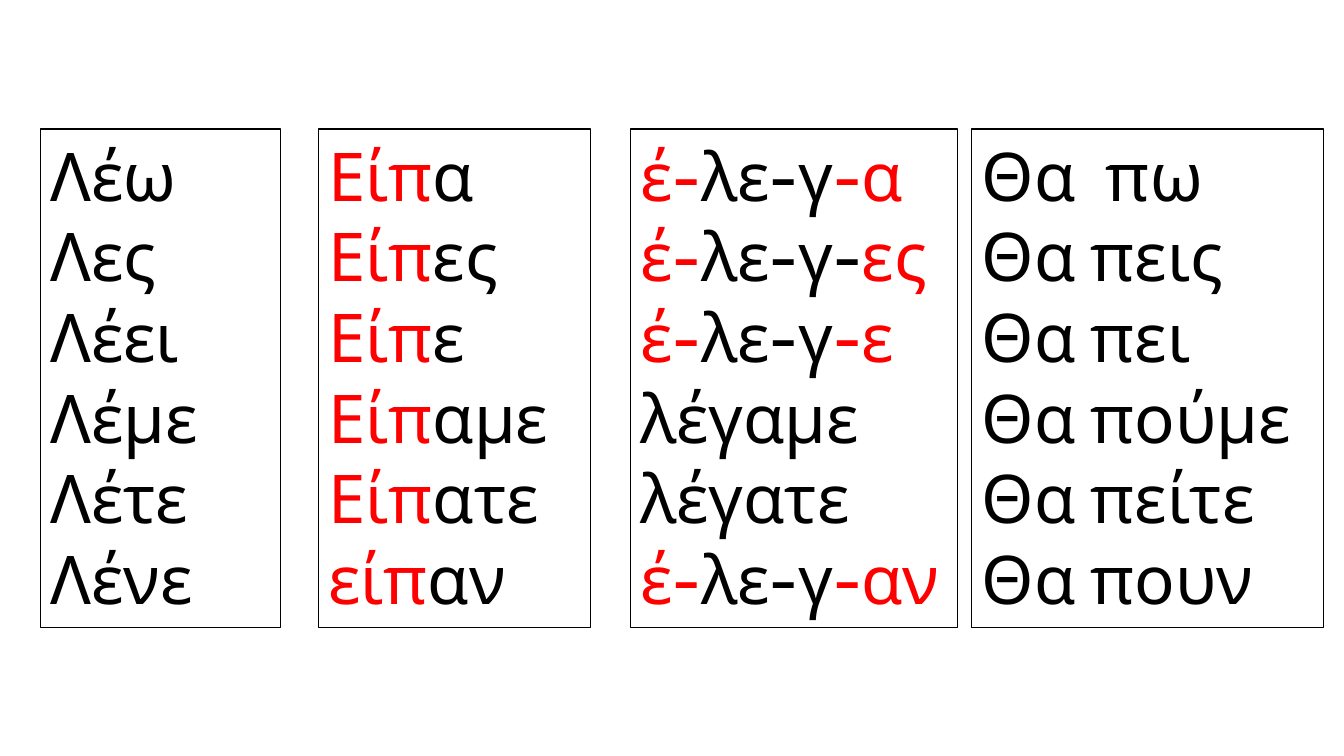
from pptx import Presentation
from pptx.dml.color import RGBColor
from pptx.enum.text import MSO_ANCHOR, MSO_AUTO_SIZE
from pptx.util import Inches, Pt

BLACK, RED = "000000", "FF0000"
TOP, HEIGHT = 1.28, 4.95
FONT = {"name": "Cabin", "size": Pt(48)}
FRAME = {
    "word_wrap": True,
    "auto_size": MSO_AUTO_SIZE.SHAPE_TO_FIT_TEXT,
    "vertical_anchor": MSO_ANCHOR.TOP,
}
RED_MARK = "*"
VERB_COLUMNS = [
    (0.4, 2.38, ["Λέω", "Λες", "Λέει", "Λέμε", "Λέτε", "Λένε"]),
    (3.16, 2.7, ["*Είπ*α", "*Είπ*ες", "*Είπ*ε", "*Είπ*αμε", "*Είπ*ατε", "*είπ*αν"]),
    (6.25, 3.25, ["*έ-*λε-γ*-α", "*έ-*λε-γ-*ες", "*έ-*λε-γ*-ε",
                  "λέγαμε", "λέγατε", "*έ-*λε-γ*-αν"]),
    (9.64, 3.49, ["Θα  πω", "Θα πεις", "Θα πει", "Θα πούμε", "Θα πείτε", "Θα πουν"]),
]


def color(value):
    return RGBColor.from_string(value)


def apply_format(target, values):
    for name, value in values.items():
        setattr(target, name, value)


def add_verb_form(para, form):
    for index, part in enumerate(form.split(RED_MARK)):
        if part:
            span = para.add_run()
            span.text = part
            apply_format(span.font, FONT)
            span.font.color.rgb = color(RED if index % 2 else BLACK)


def add_verb_column(page, left, width, forms):
    box = page.shapes.add_textbox(Inches(left), Inches(TOP), Inches(width), Inches(HEIGHT))
    box.line.color.rgb = color(BLACK)
    box.line.width = Pt(0.75)
    frame = box.text_frame
    apply_format(frame, FRAME)
    for index, form in enumerate(forms):
        para = frame.add_paragraph() if index else frame.paragraphs[0]
        add_verb_form(para, form)


def main():
    deck = Presentation()
    deck.slide_width, deck.slide_height = Inches(13.33), Inches(7.5)
    page = deck.slides.add_slide(deck.slide_layouts[6])
    for left, width, forms in VERB_COLUMNS:
        add_verb_column(page, left, width, forms)
    deck.save("out.pptx")


if __name__ == "__main__":
    main()
